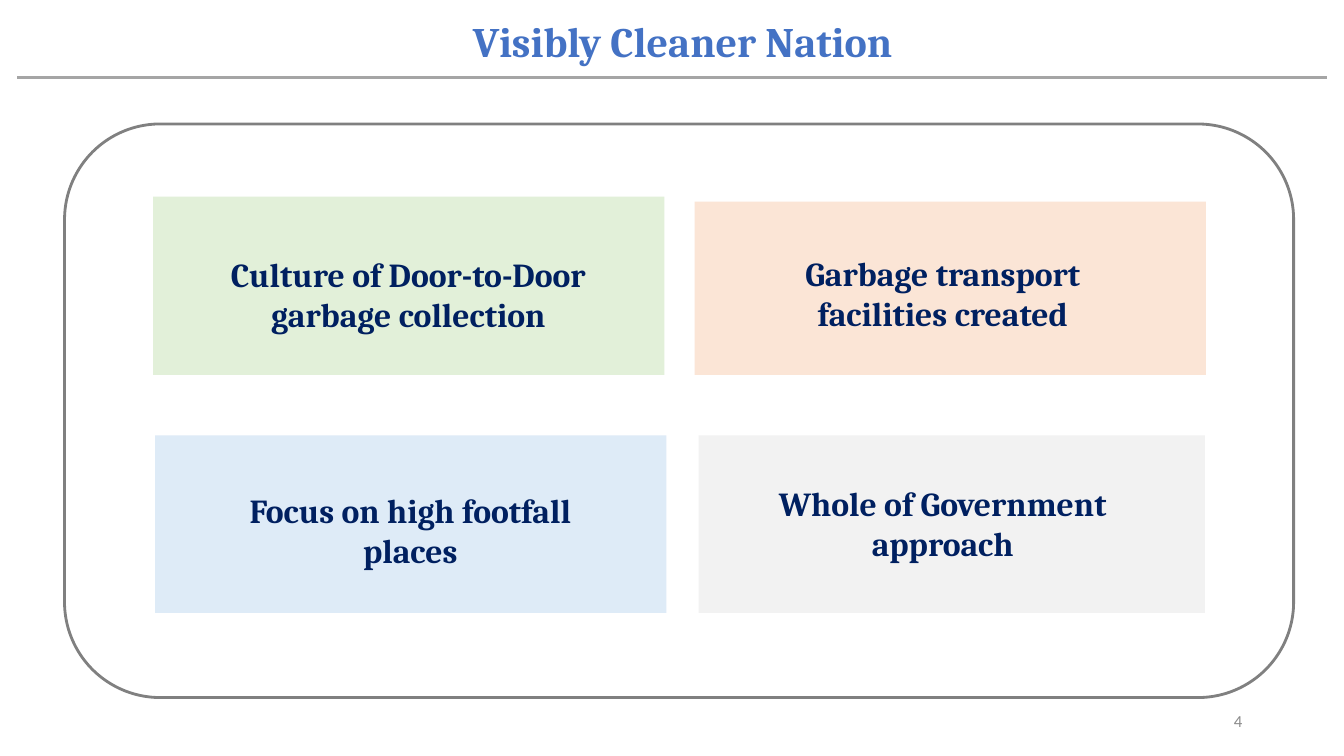
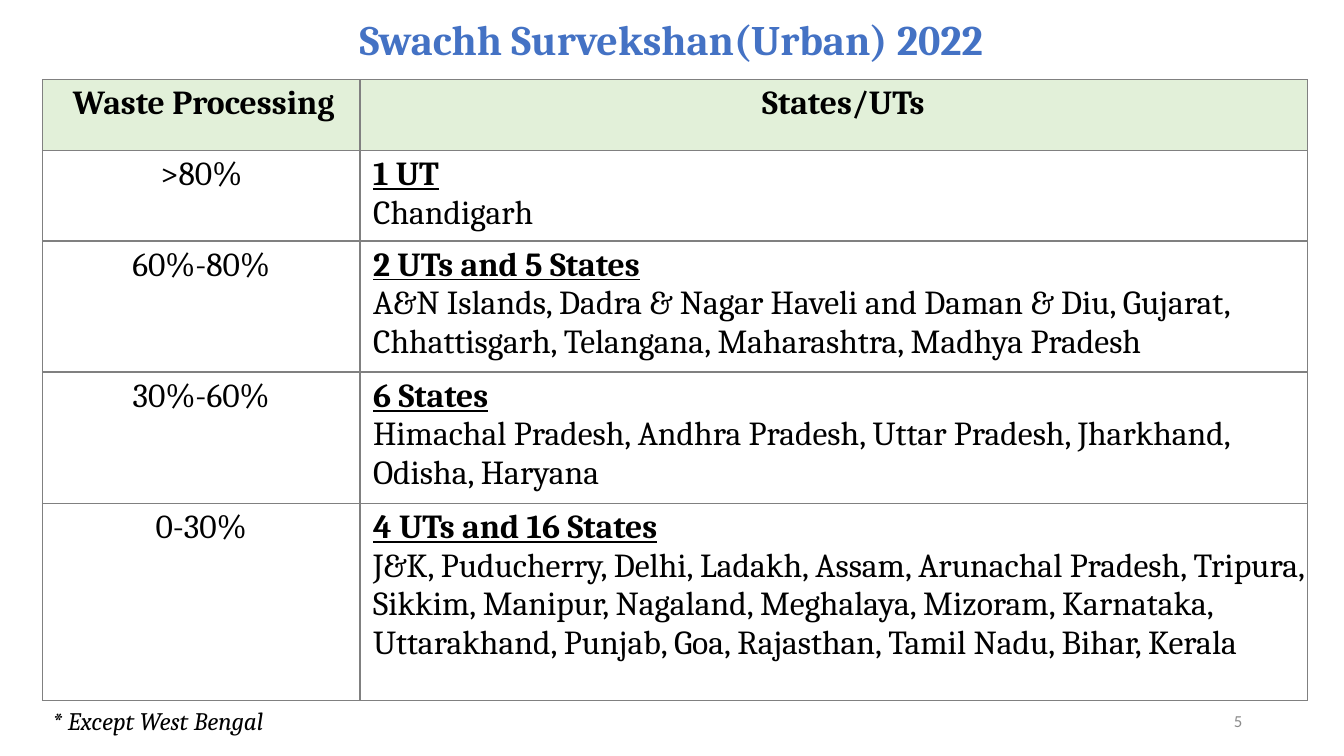
import pptx
import pptx.dml.color
import pptx.enum.shapes
import pptx.enum.text
import pptx.oxml.ns
import pptx.util
from lxml import etree

RGB = pptx.dml.color.RGBColor
ALIGN = pptx.enum.text.PP_ALIGN
ANCHOR = pptx.enum.text.MSO_ANCHOR
SHAPE = pptx.enum.shapes.MSO_SHAPE
qn = pptx.oxml.ns.qn

PX = 9144
SERIF, SANS = "Cambria", "Calibri"
BLUE = RGB(0x44, 0x72, 0xC4)
NAVY = RGB(0x00, 0x20, 0x60)
BLACK = RGB(0x00, 0x00, 0x00)
WHITE = RGB(0xFF, 0xFF, 0xFF)
GREY = RGB(0x80, 0x80, 0x80)
RULE_GREY = RGB(0xA5, 0xA5, 0xA5)
NUMBER_GREY = RGB(0x8B, 0x8B, 0x8B)
GREEN_TINT = RGB(0xE2, 0xF0, 0xD9)
ORANGE_TINT = RGB(0xFB, 0xE5, 0xD6)
BLUE_TINT = RGB(0xDE, 0xEB, 0xF7)
GREY_TINT = RGB(0xF2, 0xF2, 0xF2)

CARDS = [
    ((152, 195, 507, 177), GREEN_TINT, (53, 52), "Culture of Door-to-Door garbage collection"),
    ((689, 200, 507, 172), ORANGE_TINT, (46, 46), "Garbage transport facilities created"),
    ((154, 432, 507, 176), BLUE_TINT, (53, 49), "Focus on high footfall places"),
    ((693, 432, 502, 176), GREY_TINT, (42, 42), "Whole of Government approach"),
]
HEADERS = ("Waste Processing", "States/UTs")
BANDS = [
    (">80%", "1 UT", "Chandigarh"),
    ("60%-80%", "2 UTs and 5 States",
     "A&N Islands, Dadra & Nagar Haveli and Daman & Diu, Gujarat, "
     "Chhattisgarh, Telangana, Maharashtra, Madhya Pradesh"),
    ("30%-60%", "6 States",
     "Himachal Pradesh, Andhra Pradesh, Uttar Pradesh, Jharkhand, Odisha, Haryana"),
    ("0-30%", "4 UTs and 16 States",
     "J&K, Puducherry, Delhi, Ladakh, Assam, Arunachal Pradesh, Tripura, Sikkim, "
     "Manipur, Nagaland, Meghalaya, Mizoram, Karnataka, Uttarakhand, Punjab, Goa, "
     "Rajasthan, Tamil Nadu, Bihar, Kerala"),
]
COL_WIDTHS = (315, 940)
ROW_HEIGHTS = (70, 82, 118, 118, 196)


def emu(box):
    """Turn px lengths into EMU."""
    return [v * PX for v in box]


def style(p, size, color, font=SERIF, bold=False, italic=False, align=ALIGN.LEFT):
    """Format a paragraph and its runs."""
    p.alignment = align
    for r in p.runs:
        r.font.name = font
        r.font.size = pptx.util.Pt(size)
        r.font.color.rgb = color
        r.font.bold = bold
        r.font.italic = italic


def add_text(s, box, text, size, color, anchor=ANCHOR.TOP, **kw):
    """Add a wrapped one-paragraph text box and return its paragraph."""
    tf = s.shapes.add_textbox(*emu(box)).text_frame
    tf.word_wrap = True
    tf.vertical_anchor = anchor
    p = tf.paragraphs[0]
    p.text = text
    style(p, size, color, **kw)
    return p


def add_frame(prs, title, title_box, number):
    """Add a blank slide with its title and slide number."""
    s = prs.slides.add_slide(prs.slide_layouts[6])
    p = add_text(s, title_box, title, 30, BLUE, bold=True, align=ALIGN.CENTER)
    add_text(s, (942, 695, 300, 40), str(number), 12, NUMBER_GREY,
             anchor=ANCHOR.MIDDLE, font=SANS, align=ALIGN.RIGHT)
    return s, p


def add_rule(s, x1, x2, y):
    """Add the horizontal rule below a title."""
    line = s.shapes.add_connector(
        pptx.enum.shapes.MSO_CONNECTOR.STRAIGHT, *emu((x1, y, x2, y)))
    line.line.color.rgb = RULE_GREY
    line.line.width = pptx.util.Pt(2.25)
    etree.SubElement(line._element.spPr, qn("a:effectLst"))


def add_panel(s, box):
    """Add the rounded outline around the cards."""
    sp = s.shapes.add_shape(SHAPE.ROUNDED_RECTANGLE, *emu(box))
    sp.shadow.inherit = False
    sp.fill.background()
    sp.line.color.rgb = GREY
    sp.line.width = pptx.util.Pt(2)


def add_card(s, box, fill, offset, text):
    """Add a tinted card with its label at an offset from the corner."""
    sp = s.shapes.add_shape(SHAPE.RECTANGLE, *emu(box))
    sp.shadow.inherit = False
    sp.fill.solid()
    sp.fill.fore_color.rgb = fill
    sp.line.fill.background()
    add_text(s, (box[0] + offset[0], box[1] + offset[1], 400, 90), text, 24, NAVY,
             bold=True, align=ALIGN.CENTER)


def fill_cell(cell, lines, fill, indent, align, bold_first):
    """Write a bordered cell, one paragraph per line."""
    cell.margin_left = cell.margin_right = PX
    cell.margin_top = cell.margin_bottom = 5 * PX
    tcPr = cell._tc.get_or_add_tcPr()
    for side in ("a:lnL", "a:lnR", "a:lnT", "a:lnB"):
        ln = etree.SubElement(tcPr, qn(side), w="12192")
        solid = etree.SubElement(ln, qn("a:solidFill"))
        etree.SubElement(solid, qn("a:srgbClr"), val=str(GREY))
    cell.fill.solid()
    cell.fill.fore_color.rgb = fill
    cell.text_frame.text = "\n".join(lines)
    for i, p in enumerate(cell.text_frame.paragraphs):
        style(p, 24, BLACK, bold=bold_first and i == 0, align=align)
        p._p.get_or_add_pPr().set("marL", str(indent * PX))
    if len(lines) > 1:
        cell.text_frame.paragraphs[0].runs[0].font.underline = True


def add_band_table(s, left, top):
    """Add the table of waste processing bands."""
    box = (left, top, sum(COL_WIDTHS), sum(ROW_HEIGHTS))
    table = s.shapes.add_table(len(ROW_HEIGHTS), len(COL_WIDTHS), *emu(box)).table
    table.first_row = table.horz_banding = False
    for col, width in zip(table.columns, COL_WIDTHS):
        col.width = width * PX
    for row, height in zip(table.rows, ROW_HEIGHTS):
        row.height = height * PX
    for j, (header, indent) in enumerate(zip(HEADERS, (5, 19))):
        fill_cell(table.cell(0, j), [header], GREEN_TINT, indent, ALIGN.CENTER, True)
    for i, (band, count, names) in enumerate(BANDS, 1):
        fill_cell(table.cell(i, 0), [band], WHITE, 0, ALIGN.CENTER, False)
        fill_cell(table.cell(i, 1), [count, names], WHITE, 12, ALIGN.LEFT, True)


def build_cards_slide(prs):
    """Build the slide with four cards."""
    s, p = add_frame(prs, "Visibly Cleaner Nation", (147, 10, 1060, 61), 4)
    add_rule(s, 17, 1316, 77)
    add_panel(s, (64, 123, 1219, 569))
    for card in CARDS:
        add_card(s, *card)


def build_table_slide(prs):
    """Build the slide with the survey table."""
    s, p = add_frame(prs, "Swachh Survekshan(Urban) 2022", (136, 14, 1060, 56), 5)
    p.line_spacing = 0.9
    add_band_table(s, 42, 79)
    add_text(s, (42, 695, 672, 40), "* Except West Bengal", 18, BLACK, italic=True)


def main():
    """Build and save the presentation."""
    prs = pptx.Presentation()
    prs.slide_width, prs.slide_height = emu((1333, 750))
    build_cards_slide(prs)
    build_table_slide(prs)
    prs.save("out.pptx")


if __name__ == "__main__":
    main()
